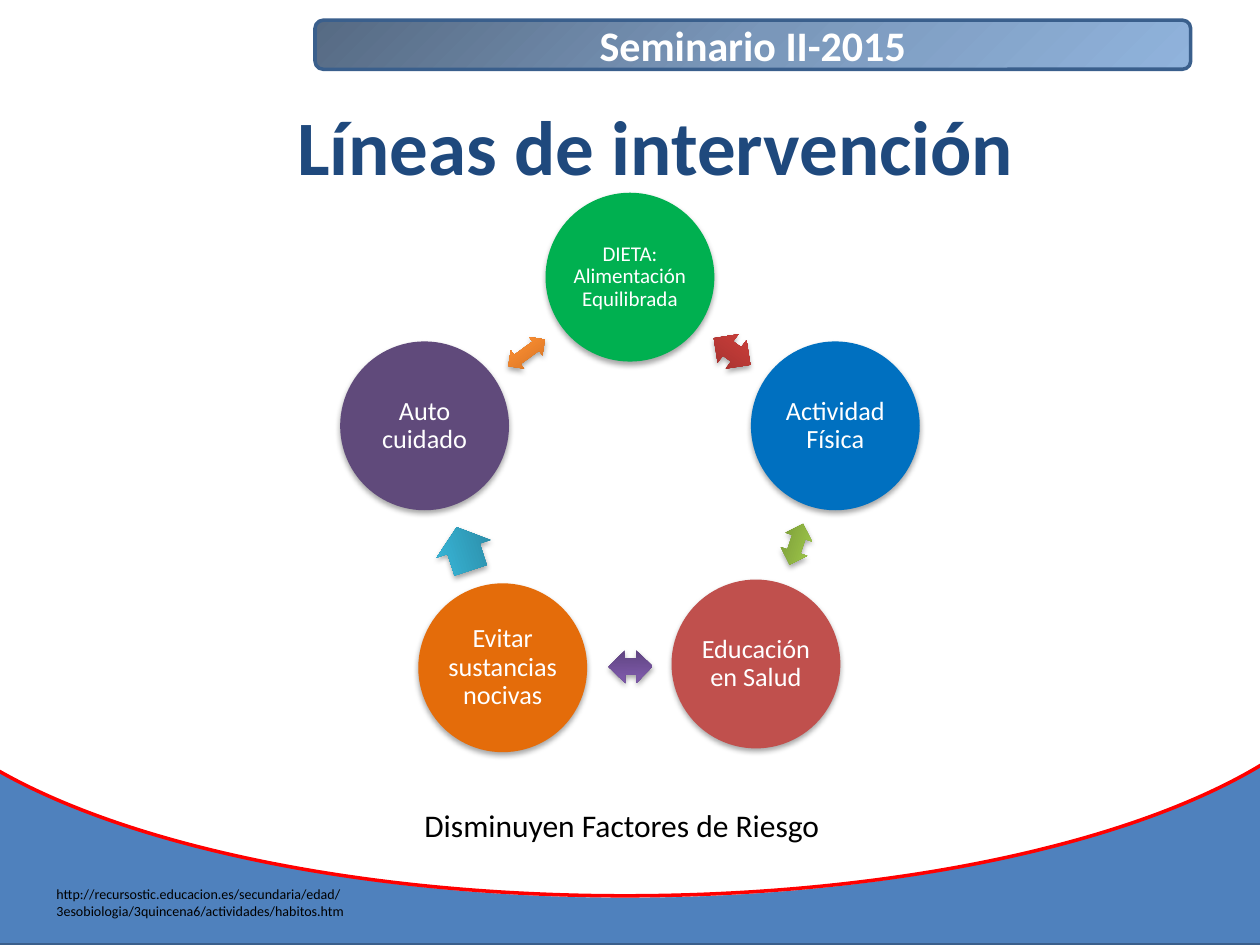
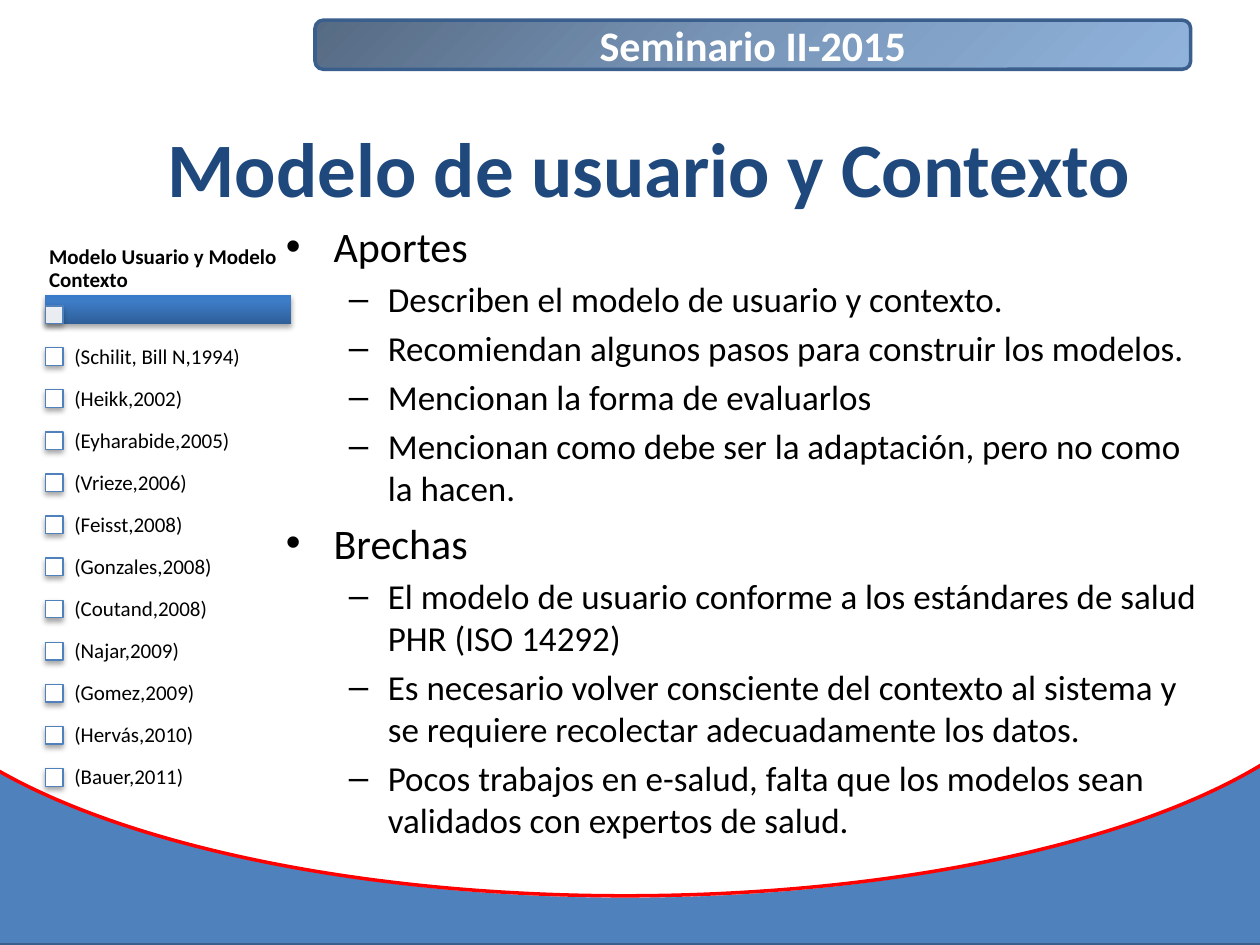
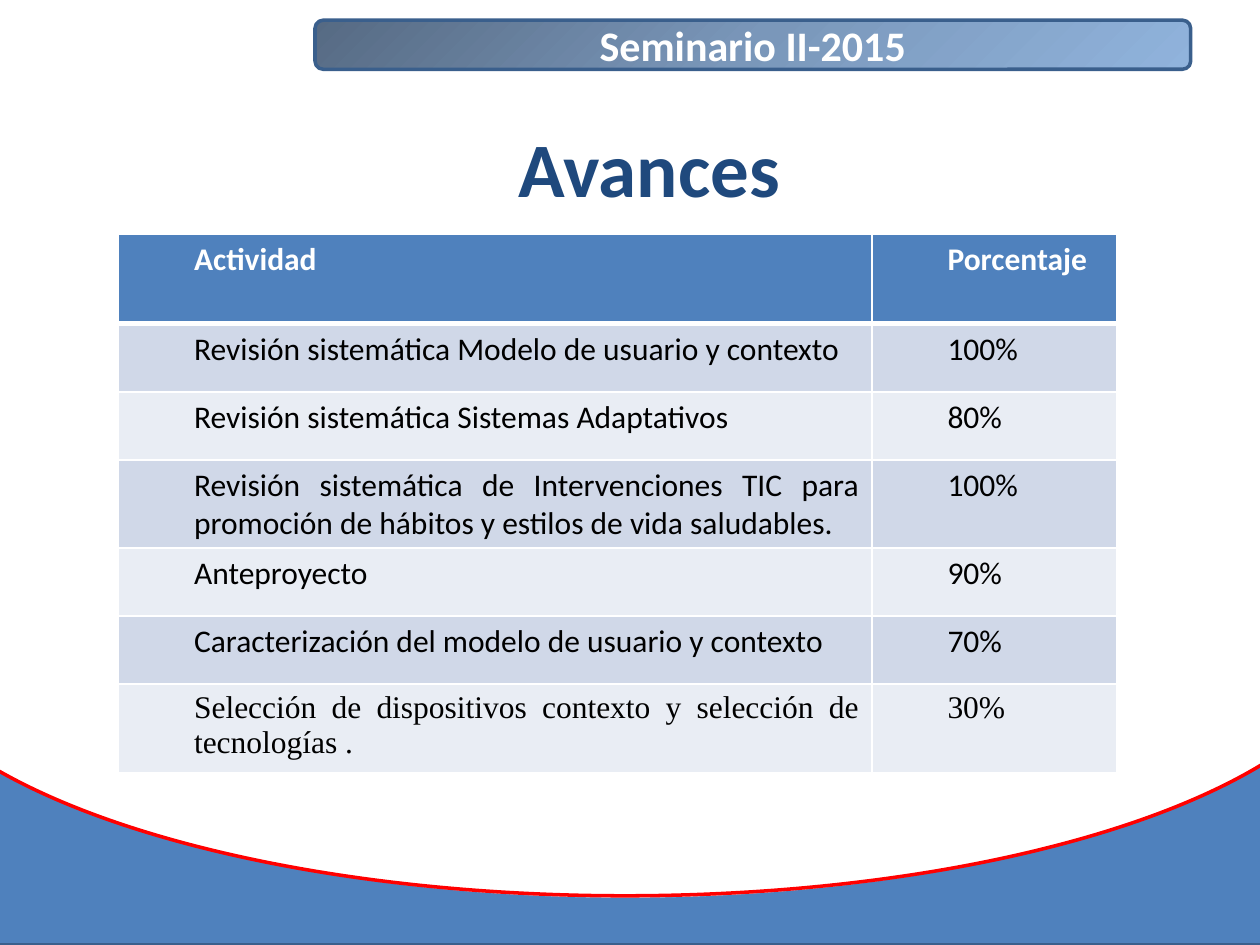
from copy import deepcopy

from pptx import Presentation
from pptx.dml.color import RGBColor
from pptx.enum.shapes import MSO_SHAPE
from pptx.enum.text import MSO_ANCHOR, PP_ALIGN
from pptx.oxml.ns import qn
from pptx.oxml.xmlchemy import OxmlElement
from pptx.util import Inches, Pt

RECT, OVAL, ROUND = MSO_SHAPE.RECTANGLE, MSO_SHAPE.OVAL, MSO_SHAPE.ROUNDED_RECTANGLE
BOTH, RIGHT = MSO_SHAPE.LEFT_RIGHT_ARROW, MSO_SHAPE.RIGHT_ARROW
TOP, MID = MSO_ANCHOR.TOP, MSO_ANCHOR.MIDDLE
LEFT, MIDDLE, FULL = PP_ALIGN.LEFT, PP_ALIGN.CENTER, PP_ALIGN.JUSTIFY

HUE = {
    "white": "FFFFFF", "black": "000000", "blue": "4F81BD", "edge": "3A5F8C",
    "red": "FF0000", "navy": "1F497D", "green": "00B050", "sky": "0070C0",
    "brick": "C0504D", "orange": "E46C0A", "plum": "604A7B",
    "odd": "D0D8E8", "even": "E9EDF4",
}
# Gradients: three colours, position of the middle one, angle
FADE = {
    "band": ("566A83", "7A97BA", "90B3DC", 0.5, 315),
    "bar": ("2F5F99", "3D7CC7", "3A7CCB", 0.8, 90),
    "ruby": ("9C2F2D", "CB3E3A", "CE3B37", 0.8, 90),
    "lime": ("779737", "9BC348", "9DC746", 0.8, 90),
    "violet": ("5F4480", "7B58A6", "7C57A8", 0.8, 90),
    "teal": ("2A88A2", "37B1D2", "34B4D6", 0.8, 90),
    "amber": ("CC6E20", "FF9034", "FF9136", 0.8, 90),
}
# Text looks
BASE = {"name": "Calibri", "size": Pt(18), "bold": False}
HEAD = BASE | {"size": Pt(44), "bold": True}
BAND = BASE | {"size": Pt(24), "bold": True}
SMALL = BASE | {"size": Pt(12)}

deck = Presentation()
deck.slide_width, deck.slide_height = Inches(10), Inches(7.5)
UNIT = deck.slide_width // 10  # grid of 10 columns by 7.5 rows


def draw(page, kind, box, fill=None, line=None, width=2, glow=False, pad=(0.1, 0.05), anchor=MID):
    """Add a shape, or a text box when kind is None, placed on the grid."""
    place = [round(n * UNIT) for n in box]
    item = page.shapes.add_shape(kind, *place) if kind else page.shapes.add_textbox(*place)
    item.shadow.inherit = False
    props = item._element.spPr
    if fill in FADE:
        *tones, mid, angle = FADE[fill]
        item.fill.gradient()
        item.fill.gradient_angle = angle
        stops = props.find(".//" + qn("a:gsLst"))
        stops.append(deepcopy(stops[-1]))
        for stop, tone, spot in zip(item.fill.gradient_stops, tones, (0, mid, 1)):
            stop.position, stop.color.rgb = spot, RGBColor.from_string(tone)
    elif fill:
        item.fill.solid()
        item.fill.fore_color.rgb = RGBColor.from_string(HUE[fill])
    else:
        item.fill.background()
    if line:
        item.line.color.rgb = RGBColor.from_string(HUE[line])
        item.line.width = Pt(width)
    else:
        item.line.fill.background()
    if glow:
        node = props.find(qn("a:effectLst"))
        for tag, pairs in (
            ("a:outerShdw", {"blurRad": Pt(3.1), "dist": Pt(1.8), "dir": 5400000, "rotWithShape": 0}),
            ("a:srgbClr", {"val": HUE["black"]}),
            ("a:alpha", {"val": 35000}),
        ):
            child = OxmlElement(tag)
            for key, val in pairs.items():
                child.set(key, str(val))
            node.append(child)
            node = child
    across, down = (Inches(n) for n in pad)
    form = {"word_wrap": True, "vertical_anchor": anchor, "margin_left": across,
            "margin_right": across, "margin_top": down, "margin_bottom": down}
    for key, val in form.items():
        setattr(item.text_frame, key, val)
    return item


def write(para, text, look=BASE, hue="black", align=LEFT, space=None):
    """Put one formatted run into a paragraph."""
    para.alignment, para.line_spacing = align, space
    run = para.add_run()
    run.text = text
    for key, val in look.items():
        setattr(run.font, key, val)
    run.font.color.rgb = RGBColor.from_string(HUE[hue])


# Shared backdrop, band and title
pages = []
for title, box in (
    ("Líneas de intervención", (1.22, 0.52, 7.97, 1.25)),
    ("Modelo de usuario y Contexto", (1.17, 0.7, 7.97, 1.25)),
    ("Avances", (1.17, 0.7, 7.97, 1.25)),
):
    page = deck.slides.add_slide(deck.slide_layouts[6])
    pages.append(page)
    for kind, spot, fill, line in (
        (RECT, (-0.94, 3.83, 12.11, 3.67), "blue", "edge"),
        (OVAL, (-1.09, 2.42, 12.11, 4.69), "white", "white"),
        (OVAL, (-0.94, 2.81, 11.8, 4.3), None, "red"),
        (RECT, (-0.94, 0, 12.11, 5.86), "white", "white"),
    ):
        draw(page, kind, spot, fill, line)
    band = draw(page, ROUND, (2.5, 0.16, 6.95, 0.39), "band", "edge")
    write(band.text_frame.paragraphs[0], "Seminario II-2015", BAND, "white", MIDDLE)
    head = draw(page, None, box)
    write(head.text_frame.paragraphs[0], title, HEAD, "navy", MIDDLE)
cycle, model, gains = pages

# Slide 1: ring of habits, then the arrows between them
for text, left, top, fill, size in (
    ("DIETA: Alimentación Equilibrada", 4.33, 1.53, "green", 12),
    ("Actividad Física", 5.96, 2.71, "sky", 15),
    ("Educación en Salud", 5.33, 4.6, "brick", 15),
    ("Evitar sustancias nocivas", 3.32, 4.63, "orange", 15),
    ("Auto cuidado", 2.7, 2.71, "plum", 15),
):
    disc = draw(cycle, OVAL, (left, top, 1.34, 1.34), fill, glow=True, pad=(0.02, 0.02))
    write(disc.text_frame.paragraphs[0], text, BASE | {"size": Pt(size)}, "white", MIDDLE, 0.9)

for kind, box, turn, fill in (
    (BOTH, (5.63, 2.65, 0.36, 0.28), 36, "ruby"),
    (BOTH, (6.15, 4.21, 0.34, 0.22), 108.4, "lime"),
    (BOTH, (4.83, 5.16, 0.35, 0.26), 179.2, "violet"),
    (RIGHT, (3.5, 4.13, 0.36, 0.45), 252, "teal"),
    (BOTH, (4, 2.71, 0.36, 0.18), 324, "amber"),
):
    arrow = draw(cycle, kind, box, fill, glow=True)
    arrow.rotation = turn
    if kind == RIGHT:
        arrow.adjustments[0] = 0.6

for text, box, size in (
    ("Disminuyen Factores de Riesgo", (3.27, 6.35, 3.46, 0.4), 18),
    ("http://recursostic.educacion.es/secundaria/edad/3esobiologia/3quincena6/actividades/habitos.htm",
     (0.35, 6.98, 2.76, 0.37), 8),
):
    note = draw(cycle, None, box, anchor=TOP)
    write(note.text_frame.paragraphs[0], text, BASE | {"size": Pt(size)})

# Slide 2: findings and gaps
LEVELS = (
    {"char": "•", "left": 0.38, "hang": -0.38, "size": 24},
    {"char": "–", "left": 0.81, "hang": -0.31, "size": 20},
)
body = draw(model, None, (2.17, 1.7, 7.56, 5.31), anchor=TOP).text_frame
for row, (rank, text) in enumerate((
    (0, "Aportes"),
    (1, "Describen el modelo de usuario y contexto."),
    (1, "Recomiendan algunos pasos para construir los modelos."),
    (1, "Mencionan la forma de evaluarlos"),
    (1, "Mencionan como debe ser la adaptación, pero no como la hacen."),
    (0, "Brechas"),
    (1, "El modelo de usuario conforme a los estándares de salud PHR (ISO 14292)"),
    (1, "Es necesario volver consciente del contexto al sistema y se requiere "
        "recolectar adecuadamente los datos."),
    (1, "Pocos trabajos en e-salud, falta que los modelos sean validados con expertos de salud."),
)):
    level = LEVELS[rank]
    para = body.add_paragraph() if row else body.paragraphs[0]
    para.level = rank
    props = para._p.get_or_add_pPr()
    props.set("marL", str(Inches(level["left"])))
    props.set("indent", str(Inches(level["hang"])))
    for tag, key, val in (("a:buFont", "typeface", "Arial"), ("a:buChar", "char", level["char"])):
        mark = OxmlElement(tag)
        mark.set(key, val)
        props.append(mark)
    if row:
        para.space_before = Pt(level["size"] * 0.2)
    write(para, text, BASE | {"size": Pt(level["size"])})

# Slide 2: list of sources
draw(model, RECT, (0.36, 2.34, 1.95, 0.23), "bar", glow=True)
tick = draw(model, RECT, (0.36, 2.43, 0.14, 0.14), "white", "blue", 0.75, True)
alpha = OxmlElement("a:alpha")
alpha.set("val", "90000")
tick._element.spPr.find(qn("a:solidFill"))[0].append(alpha)
label = draw(model, None, (0.36, 1.86, 1.95, 0.55), pad=(0.03, 0.02))
write(label.text_frame.paragraphs[0], "Modelo Usuario y Modelo Contexto",
      SMALL | {"bold": True}, space=0.9)

STEP = (6.01 - 2.67) / 10
for row, text in enumerate((
    "(Schilit, Bill N,1994)", "(Heikk,2002)", "(Eyharabide,2005)", "(Vrieze,2006)",
    "(Feisst,2008)", "(Gonzales,2008)", "(Coutand,2008)", "(Najar,2009)",
    "(Gomez,2009)", "(Hervás,2010)", "(Bauer,2011)",
)):
    top = 2.67 + row * STEP
    draw(model, RECT, (0.36, top + 0.09, 0.14, 0.14), "white", "blue", 0.75, True)
    entry = draw(model, None, (0.5, top, 1.82, 0.33), pad=(0.09, 0.09))
    write(entry.text_frame.paragraphs[0], text, SMALL, space=0.9)

# Slide 3: progress table
TASKS = (
    ("Actividad", "Porcentaje", 0.71),
    ("Revisión sistemática Modelo de usuario y contexto", "100%", 0.54),
    ("Revisión sistemática Sistemas Adaptativos", "80%", 0.54),
    ("Revisión sistemática de Intervenciones TIC para promoción de hábitos y "
     "estilos de vida saludables.", "100%", 0.66),
    ("Anteproyecto", "90%", 0.54),
    ("Caracterización del modelo de usuario y contexto", "70%", 0.54),
    ("Selección de dispositivos contexto y selección de tecnologías .", "30%", 0.54),
)
place = [round(n * UNIT) for n in (0.94, 1.86, 7.92, 4.07)]
table = gains.shapes.add_table(len(TASKS), 2, *place).table
for col, wide in zip(table.columns, (5.98, 1.94)):
    col.width = round(wide * UNIT)
for row, (*texts, tall) in enumerate(TASKS):
    table.rows[row].height = round(tall * UNIT)
    look = BASE | {"bold": row == 0}
    if row == len(TASKS) - 1:
        look["name"] = "Times New Roman"
    for col, text in enumerate(texts):
        cell = table.cell(row, col)
        props = cell._tc.get_or_add_tcPr()
        for side in "LRTB":
            thick = 3 if (row, side) in ((0, "B"), (1, "T")) else 1
            edge = OxmlElement("a:ln" + side)
            edge.set("w", str(Pt(thick)))
            paint, tone = OxmlElement("a:solidFill"), OxmlElement("a:srgbClr")
            tone.set("val", HUE["white"])
            paint.append(tone)
            edge.append(paint)
            props.append(edge)
        fill = ("odd" if row % 2 else "even") if row else "blue"
        cell.fill.solid()
        cell.fill.fore_color.rgb = RGBColor.from_string(HUE[fill])
        para = cell.text_frame.paragraphs[0]
        para._p.get_or_add_pPr().set("marL", str(Inches(0.5)))
        write(para, text, look, "black" if row else "white", FULL)

deck.save("out.pptx")
